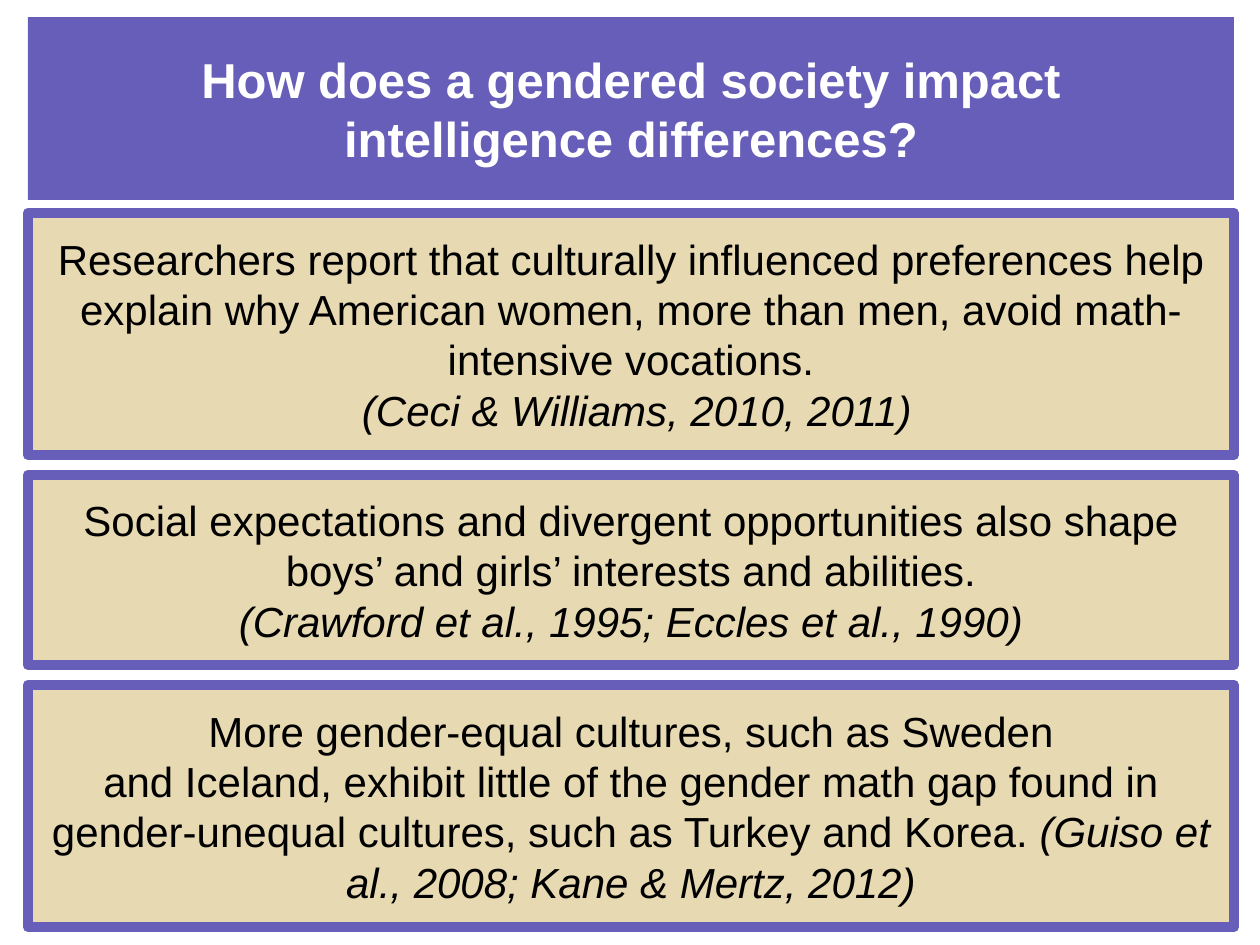
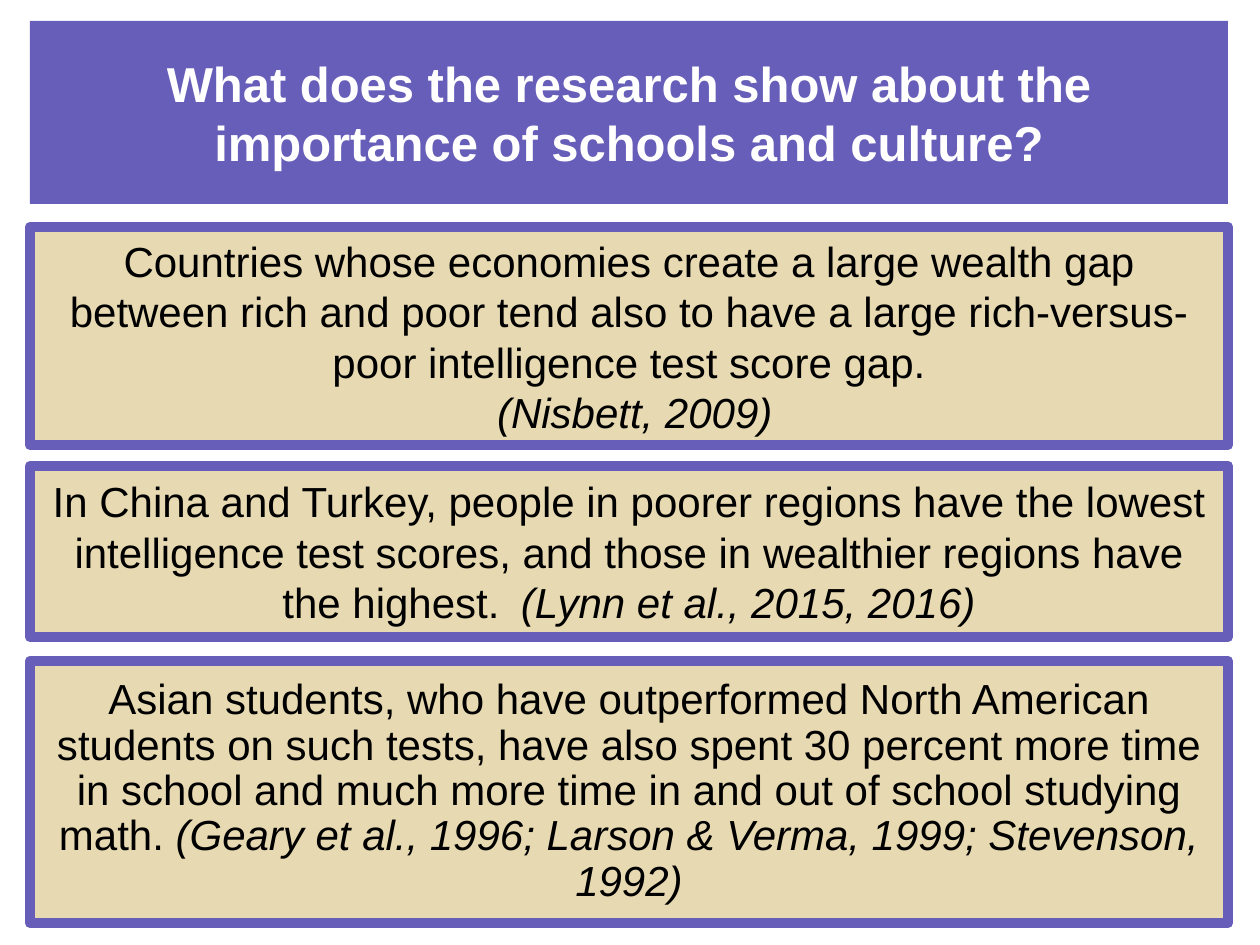
from pptx import Presentation, util as u
from pptx.dml.color import RGBColor
from pptx.enum import shapes, text

PX = 914400 / 126
COLORS = {"purple": "665EB8", "sand": "E7D9B1", "white": "FFFFFF", "black": "000000"}
FONT = "Arial"
TITLE_HEIGHT = 183
TITLE_SIZE, BODY_SIZE, SPACE_SIZE = 28, 24, 20

SLIDES = [
    {
        "left": 28, "width": 1206, "title_top": 17,
        "title": ["How does a gendered society impact", "intelligence differences?"],
        "boxes": [
            (213, 242, 1.0, [
                [("Researchers report that culturally influenced preferences help explain why "
                  "American women, more than men, avoid math-intensive vocations.", BODY_SIZE, False)],
                [(" ", BODY_SIZE, False), ("(Ceci & Williams, 2010, 2011)", BODY_SIZE, True)],
            ]),
            (475, 190, 1.0, [
                [("Social expectations and divergent opportunities also shape boys’ and girls’ "
                  "interests and abilities.", BODY_SIZE, False)],
                [("(Crawford et al., 1995; Eccles et al., 1990)", BODY_SIZE, True)],
            ]),
            (685, 242, 1.0, [
                [("More gender-equal cultures, such as Sweden", BODY_SIZE, False)],
                [("and Iceland, exhibit little of the gender math gap found in gender-unequal "
                  "cultures, such as Turkey and Korea. ", BODY_SIZE, False),
                 ("(Guiso et al., 2008; Kane & Mertz, 2012)", BODY_SIZE, True)],
            ]),
        ],
    },
    {
        "left": 30, "width": 1198, "title_top": 21,
        "title": ["What does the research show about the importance of schools and culture?"],
        "boxes": [
            (227, 218, 1.0, [
                [("Countries whose economies create a large wealth gap between rich and poor tend "
                  "also to have a large rich-versus-poor intelligence test score gap.", BODY_SIZE, False)],
                [(" ", BODY_SIZE, False), ("(Nisbett, 2009)", BODY_SIZE, True)],
            ]),
            (466, 171, 1.0, [
                [("In China and Turkey, people in poorer regions have the lowest intelligence test "
                  "scores, and those in wealthier regions have the highest. ", BODY_SIZE, False),
                 (" ", SPACE_SIZE, True), ("(Lynn et al., 2015, 2016)", BODY_SIZE, True)],
            ]),
            (661, 262, 0.9, [
                [("Asian students, who have outperformed North American students on such tests, have "
                  "also spent 30 percent more time in school and much more time in and out of school "
                  "studying math. ", BODY_SIZE, False),
                 ("(Geary et al., 1996; Larson & Verma, 1999; Stevenson, 1992)", BODY_SIZE, True)],
            ]),
        ],
    },
]


def add_panel(s, left, top, width, height, fill):
    sp = s.shapes.add_shape(shapes.MSO_SHAPE.RECTANGLE,
                            *(u.Emu(round(n * PX)) for n in (left, top, width, height)))
    sp.shadow.inherit = False
    sp.fill.solid()
    sp.fill.fore_color.rgb = RGBColor.from_string(COLORS[fill])
    sp.line.fill.background()
    sp.text_frame.word_wrap = True
    sp.text_frame.vertical_anchor = text.MSO_ANCHOR.MIDDLE
    return sp


def add_run(p, words, size, color, bold=False, italic=False):
    r = p.add_run()
    r.text = words
    r.font.name = FONT
    r.font.size = u.Pt(size)
    r.font.bold = bold
    r.font.italic = italic
    r.font.color.rgb = RGBColor.from_string(COLORS[color])


prs = Presentation()
prs.slide_width = u.Emu(round(1260 * PX))
prs.slide_height = u.Emu(round(945 * PX))

for content in SLIDES:
    s = prs.slides.add_slide(prs.slide_layouts[6])
    left, width = content["left"], content["width"]

    title = add_panel(s, left, content["title_top"], width, TITLE_HEIGHT, "purple")
    p = title.text_frame.paragraphs[0]
    p.alignment = text.PP_ALIGN.CENTER
    for i, line in enumerate(content["title"]):
        if i:
            p.add_line_break()
        add_run(p, line, TITLE_SIZE, "white", bold=True)

    for top, height, spacing, paragraphs in content["boxes"]:
        sp = add_panel(s, left, top, width, height, "sand")
        sp.line.color.rgb = RGBColor.from_string(COLORS["purple"])
        sp.line.width = u.Pt(6)
        tf = sp.text_frame
        for i, runs in enumerate(paragraphs):
            p = tf.add_paragraph() if i else tf.paragraphs[0]
            p.alignment = text.PP_ALIGN.CENTER
            p.line_spacing = spacing
            for words, size, italic in runs:
                add_run(p, words, size, "black", italic=italic)

prs.save("out.pptx")
